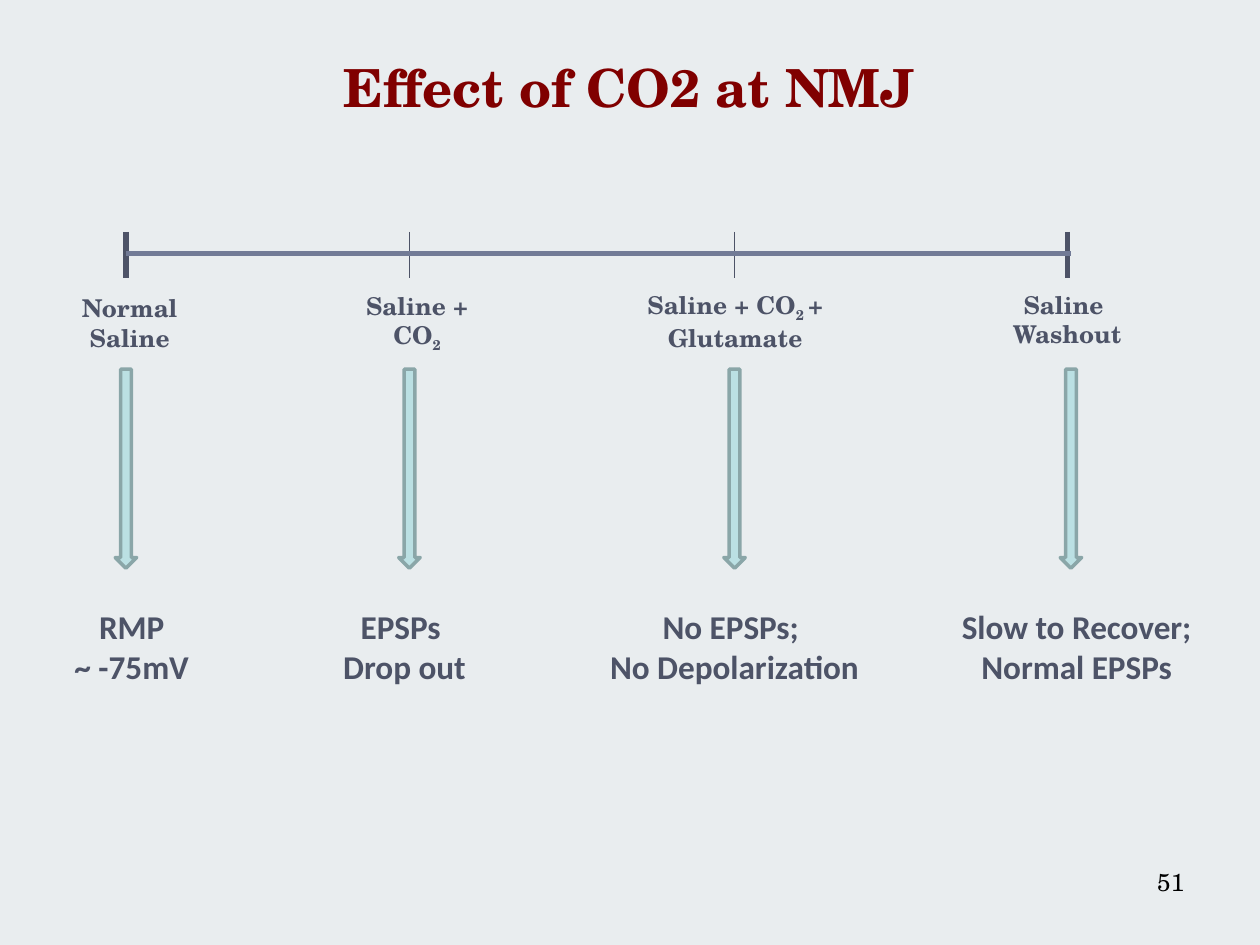
from pptx import Presentation
from pptx.dml.color import RGBColor
from pptx.enum.shapes import MSO_CONNECTOR, MSO_SHAPE
from pptx.enum.text import MSO_ANCHOR, MSO_AUTO_SIZE, PP_ALIGN
from pptx.oxml.ns import qn
from pptx.util import Inches, Pt

# Content: each stage has its timeline position, tick weight, label and result.
# A box is (left, top, width); a tuple in a label is a subscript.
TITLE = "Effect of CO2 at NMJ"
SLIDE_NUMBER = "51"
STAGES = [
    {"tick": 1, "arrow": 1, "weight": 3,
     "label": [["Normal Saline"]], "label_box": (0.25, 2.28, 1.56),
     "result": [["RMP"], ["~ -75mV"]], "result_box": (0.42, 4.76, 1.25)},
    {"tick": 3.25, "arrow": 3.25, "weight": 0.75,
     "label": [["Saline + CO", ("2",)]], "label_box": (2.62, 2.26, 1.38),
     "result": [["EPSPs "], ["Drop out"]], "result_box": (2.5, 4.76, 1.42)},
    {"tick": 5.83, "arrow": 5.83, "weight": 0.75,
     "label": [["Saline + CO", ("2 ",), "+ Glutamate"]], "label_box": (4.58, 2.25, 2.51),
     "result": [["No EPSPs; "], ["No Depolarization"]], "result_box": (4.58, 4.76, 2.5)},
    {"tick": 8.47, "arrow": 8.5, "weight": 3,
     "label": [["Saline "], ["Washout"]], "label_box": (7.52, 2.25, 1.9),
     "result": [["Slow to Recover; Normal EPSPs"]], "result_box": (7.42, 4.76, 2.25)},
]

# Style
COLOURS = {"background": "E9EDEF", "title": "800000", "text": "4D5367", "axis": "727B96",
           "arrow": "BBE0E3", "arrow_edge": "8AA6A8", "number": "000000"}
SERIF = "TeX Gyre Schola"


def colour(name):
    return RGBColor.from_string(COLOURS[name])


FONTS = {
    "title": {"name": SERIF, "size": Pt(30), "bold": True},
    "label": {"name": SERIF, "size": Pt(14), "bold": True},
    "result": {"name": "Calibri", "size": Pt(19), "bold": True},
    "number": {"name": SERIF, "size": Pt(14), "bold": False},
}
TICK_TOP, TICK_BOTTOM, AXIS_Y = 1.84, 2.21, 2.01
ARROW_TOP, ARROW_WIDTH, ARROW_HEIGHT = 2.93, 0.17, 1.58
LABEL_HEIGHT, RESULT_HEIGHT = 0.57, 0.74


def write(shape, paragraphs, font, colour_name, alignment=PP_ALIGN.CENTER):
    frame = shape.text_frame
    settings = {"word_wrap": True, "auto_size": MSO_AUTO_SIZE.NONE,
                "vertical_anchor": MSO_ANCHOR.TOP}
    for key, value in settings.items():
        setattr(frame, key, value)
    for index, parts in enumerate(paragraphs):
        paragraph = frame.add_paragraph() if index else frame.paragraphs[0]
        paragraph.alignment = alignment
        for part in parts:
            run = paragraph.add_run()
            run.text = part if isinstance(part, str) else part[0]
            for key, value in FONTS[font].items():
                setattr(run.font, key, value)
            run.font.color.rgb = colour(colour_name)
            if isinstance(part, tuple):
                run.font._element.set("baseline", "-25000")


def add_text(slide, box, height, *text_options):
    shape = slide.shapes.add_textbox(*map(Inches, (*box, height)))
    write(shape, *text_options)


def add_line(slide, ends, colour_name, weight):
    line = slide.shapes.add_connector(MSO_CONNECTOR.STRAIGHT, *map(Inches, ends))
    line.line.color.rgb = colour(colour_name)
    line.line.width = Pt(weight)
    properties = line._element.spPr
    properties.append(properties.makeelement(qn("a:effectLst"), {}))


def add_arrow(slide, centre):
    arrow = slide.shapes.add_shape(MSO_SHAPE.DOWN_ARROW, *map(
        Inches, (centre - ARROW_WIDTH / 2, ARROW_TOP, ARROW_WIDTH, ARROW_HEIGHT)))
    arrow.shadow.inherit = False
    arrow.fill.solid()
    arrow.fill.fore_color.rgb = colour("arrow")
    arrow.line.color.rgb = colour("arrow_edge")
    arrow.line.width = Pt(2)


def main():
    presentation = Presentation()
    presentation.slide_width, presentation.slide_height = Inches(10), Inches(7.5)
    slide = presentation.slides.add_slide(presentation.slide_layouts[5])
    slide.background.fill.solid()
    slide.background.fill.fore_color.rgb = colour("background")

    # Title and slide number
    title = slide.shapes.title
    title_box = {"left": 0.33, "top": 0.39, "width": 9.33, "height": 0.61}
    for key, value in title_box.items():
        setattr(title, key, Inches(value))
    write(title, [[TITLE]], "title", "title")
    add_text(slide, (7.17, 6.83, 2.33), 0.52, [[SLIDE_NUMBER]],
             "number", "number", PP_ALIGN.RIGHT)

    # Stages: tick, label, arrow and result
    for stage in STAGES:
        tick = stage["tick"]
        add_line(slide, (tick, TICK_TOP, tick, TICK_BOTTOM), "text", stage["weight"])
        add_text(slide, stage["label_box"], LABEL_HEIGHT, stage["label"], "label", "text")
        add_arrow(slide, stage["arrow"])
        add_text(slide, stage["result_box"], RESULT_HEIGHT, stage["result"], "result", "text")

    # Timeline axis, over the ticks
    add_line(slide, (STAGES[0]["arrow"], AXIS_Y, STAGES[-1]["arrow"], AXIS_Y), "axis", 3)

    presentation.save("out.pptx")


if __name__ == "__main__":
    main()
